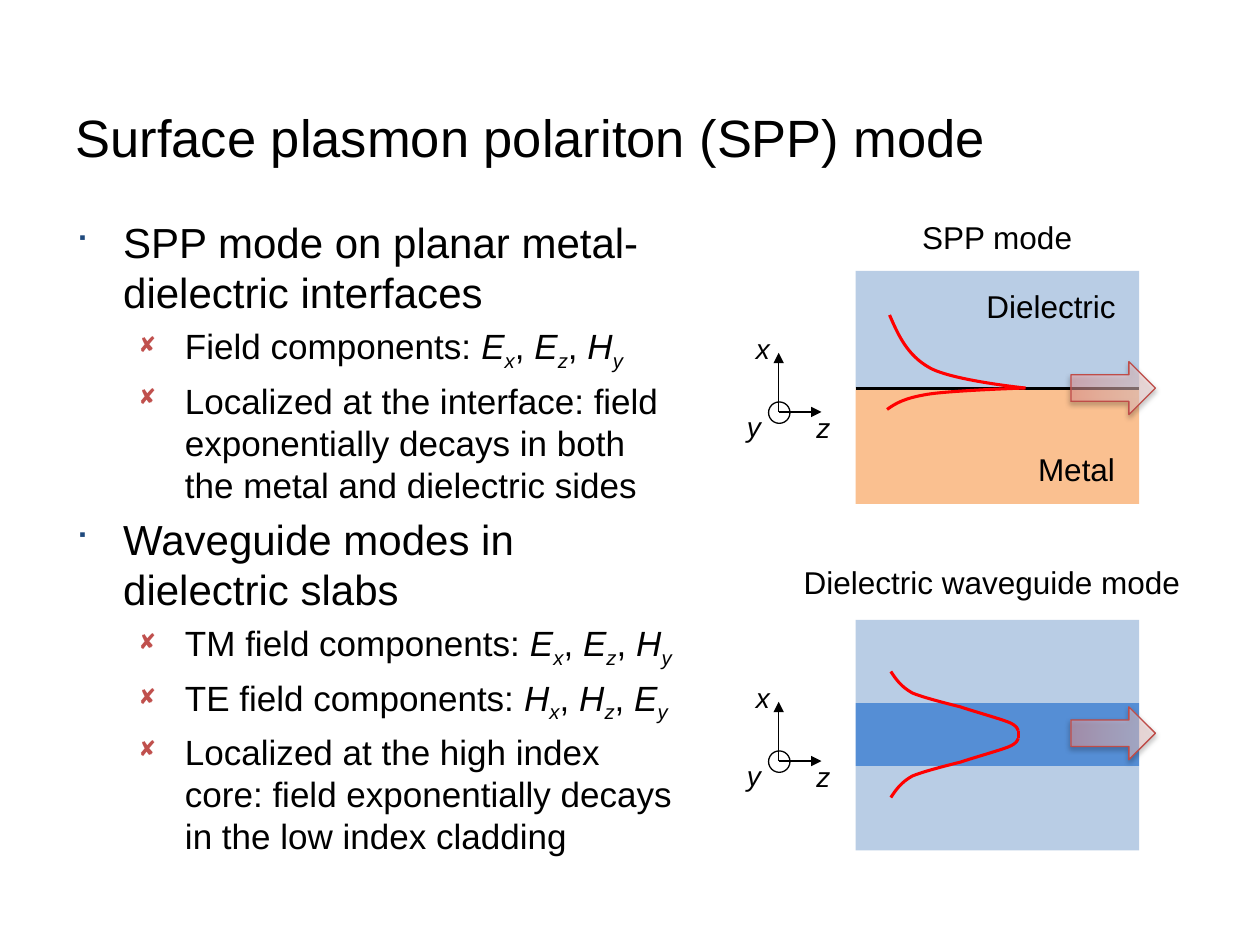
from dataclasses import dataclass

from lxml.etree import SubElement
from pptx import Presentation
from pptx.dml.color import RGBColor
from pptx.enum.shapes import MSO_CONNECTOR, MSO_SHAPE
from pptx.enum.text import MSO_ANCHOR, MSO_AUTO_SIZE, PP_ALIGN
from pptx.oxml import parse_xml
from pptx.oxml.ns import nsdecls, qn
from pptx.util import Inches, Pt


@dataclass(frozen=True)
class Theme:
    font: str = "Arial"
    bullet_font: str = "Wingdings"
    title: int = 30
    topic: int = 24
    detail: int = 20
    label: int = 18
    axis: int = 16
    black: str = "000000"
    topic_bullet: str = "1F497D"
    detail_bullet: str = "C0504D"
    dielectric: str = "B9CDE5"
    core: str = "558ED5"
    metal: str = "FAC090"
    field: str = "FF0000"
    arrow_line: str = "BF4C48"
    arrow_stops: tuple = ((0, "FFA6A5"), (35, "FFC0BF"), (100, "FFE7E7"))


THEME = Theme()
THIN, THICK = 0.75, 1.75
STACK_LEFT, STACK_WIDTH = 6.79, 2.25

# Level, text, field components (letter and subscript)
OUTLINE = [
    (0, "SPP mode on planar metal-dielectric interfaces", ""),
    (1, "Field components: ", "Ex Ez Hy"),
    (1, "Localized at the interface: field exponentially decays in both "
        "the metal and dielectric sides", ""),
    (0, "Waveguide modes in dielectric slabs", ""),
    (1, "TM field components: ", "Ex Ez Hy"),
    (1, "TE field components: ", "Hx Hz Ey"),
    (1, "Localized at the high index core: field exponentially decays "
        "in the low index cladding", ""),
]
# Per level: bullet, its colour, its size in %, text size, left margin, hanging indent
LEVELS = [
    ("■", THEME.topic_bullet, 75, THEME.topic, 0.38, 0.38),
    ("◻", THEME.detail_bullet, 80, THEME.detail, 0.87, 0.37),
]

# Bezier chains: a start point, then three points for each curve
DIELECTRIC_TAIL = [(7.06, 2.5), (7.13, 2.66), (7.2, 2.82), (7.38, 2.92),
                   (7.56, 3.02), (8.14, 3.08), (8.14, 3.08)]
METAL_TAIL = [(7.04, 3.25), (7.11, 3.2), (7.18, 3.16), (7.36, 3.13),
              (7.54, 3.1), (8.13, 3.08), (8.13, 3.08)]
GUIDED_HALF = [(7.07, 5.33), (7.11, 5.39), (7.15, 5.45), (7.24, 5.5),
               (7.33, 5.54), (7.62, 5.61), (7.62, 5.61),
               (7.74, 5.65), (7.92, 5.7), (8, 5.73),
               (8.08, 5.76), (8.08, 5.8), (8.08, 5.8)]
CORE_MIDDLE = 5.83


def rgb(color):
    return RGBColor.from_string(color)


def set_font(font, size, italic=None):
    font.name, font.size, font.italic = THEME.font, Pt(size), italic
    font.color.rgb = rgb(THEME.black)


def set_line(shape, color, width):
    shape.line.color.rgb = rgb(color)
    shape.line.width = Pt(width)


def add_title(slide, text):
    title = slide.shapes.title
    title.left, title.top = Inches(0.5), Inches(0.5)
    title.width, title.height = Inches(9), Inches(1.17)
    title.text_frame.text = text
    title.text_frame.vertical_anchor = MSO_ANCHOR.MIDDLE
    paragraph = title.text_frame.paragraphs[0]
    paragraph.alignment = PP_ALIGN.LEFT
    set_font(paragraph.font, THEME.title)


def add_bullet(paragraph, level):
    bullet, color, percent, _, margin, hanging = LEVELS[level]
    properties = paragraph._p.get_or_add_pPr()
    properties.set("marL", str(Inches(margin)))
    properties.set("indent", str(-Inches(hanging)))
    SubElement(SubElement(properties, qn("a:buClr")), qn("a:srgbClr"), val=color)
    SubElement(properties, qn("a:buSzPct"), val=str(percent * 1000))
    SubElement(properties, qn("a:buFont"), typeface=THEME.bullet_font, charset="2")
    SubElement(properties, qn("a:buChar"), char=bullet)


def add_field_components(paragraph, fields):
    for i, (letter, subscript) in enumerate(fields.split()):
        if i:
            paragraph.add_run().text = ", "
        for text, baseline in ((letter, 0), (subscript, -25000)):
            run = paragraph.add_run()
            run.text = text
            run.font.italic = True
            if baseline:
                run._r.get_or_add_rPr().set("baseline", str(baseline))


def add_outline(slide):
    frame = slide.shapes.add_textbox(
        Inches(0.5), Inches(1.67), Inches(5), Inches(5.17)).text_frame
    frame.word_wrap = True
    for i, (level, text, fields) in enumerate(OUTLINE):
        paragraph = frame.add_paragraph() if i else frame.paragraphs[0]
        size = LEVELS[level][3]
        paragraph.level = level
        add_bullet(paragraph, level)
        paragraph.add_run().text = text
        add_field_components(paragraph, fields)
        set_font(paragraph.font, size)
        if i:
            paragraph.space_before = Pt(0.2 * size)


def add_label(slide, text, left, top, width, height=0.4, size=THEME.label, italic=None):
    frame = slide.shapes.add_textbox(
        Inches(left), Inches(top), Inches(width), Inches(height)).text_frame
    frame.word_wrap = False
    frame.auto_size = MSO_AUTO_SIZE.SHAPE_TO_FIT_TEXT
    frame.text = text
    set_font(frame.paragraphs[0].font, size, italic)


def add_layer(slide, top, height, color):
    layer = slide.shapes.add_shape(
        MSO_SHAPE.RECTANGLE, Inches(STACK_LEFT), Inches(top),
        Inches(STACK_WIDTH), Inches(height))
    layer.shadow.inherit = False
    layer.fill.solid()
    layer.fill.fore_color.rgb = rgb(color)
    layer.line.fill.background()


def add_line(shapes, start, end, color=THEME.black, width=THIN, arrow=False):
    line = shapes.add_connector(
        MSO_CONNECTOR.STRAIGHT, *(Inches(value) for value in (*start, *end)))
    set_line(line, color, width)
    if arrow:
        SubElement(line.line._get_or_add_ln(), qn("a:tailEnd"), type="triangle")
    SubElement(line._element.spPr, qn("a:effectLst"))


def add_field_curve(shapes, chain):
    """Lay the chain as straight segments, then merge each three into one Bezier curve."""
    start, *points = [(Inches(x), Inches(y)) for x, y in chain]
    builder = shapes.build_freeform(*start)
    builder.add_line_segments(points, close=False)
    curve = builder.convert_to_shape()
    segments = list(curve._element.iter(qn("a:lnTo")))
    for i in range(0, len(segments), 3):
        bezier = parse_xml(f'<a:cubicBezTo {nsdecls("a")}/>')
        segments[i].addprevious(bezier)
        for segment in segments[i:i + 3]:
            bezier.append(segment[0])
            segment.getparent().remove(segment)
    curve.shadow.inherit = False
    curve.fill.background()
    set_line(curve, THEME.field, THICK)


def add_axes(slide, y):
    """Draw the x, y, z axes with their origin at height y."""
    x = 6.18
    add_line(slide.shapes, (x, y), (x, y - 0.47), arrow=True)
    add_line(slide.shapes, (x, y), (x + 0.34, y), arrow=True)
    out_of_plane = slide.shapes.add_shape(
        MSO_SHAPE.OVAL, Inches(x - 0.08), Inches(y - 0.08), Inches(0.17), Inches(0.17))
    out_of_plane.shadow.inherit = False
    out_of_plane.fill.background()
    set_line(out_of_plane, THEME.black, THIN)
    for name, dx, dy in (("x", -0.28, -0.69), ("y", -0.35, -0.07), ("z", 0.2, -0.06)):
        add_label(slide, name, x + dx, y + dy, 0.31, 0.37, THEME.axis, True)


def add_propagation_arrow(slide, top):
    arrow = slide.shapes.add_shape(
        MSO_SHAPE.RIGHT_ARROW, Inches(8.5), Inches(top), Inches(0.67), Inches(0.42))
    set_line(arrow, THEME.arrow_line, THIN)
    stops = "".join(
        f'<a:gs pos="{position * 1000}"><a:srgbClr val="{color}">'
        '<a:alpha val="50000"/></a:srgbClr></a:gs>'
        for position, color in THEME.arrow_stops)
    properties = arrow._element.spPr
    properties.find(qn("a:ln")).addprevious(parse_xml(
        f'<a:gradFill {nsdecls("a")}><a:gsLst>{stops}</a:gsLst><a:lin ang="0"/></a:gradFill>'))
    properties.append(parse_xml(
        f'<a:effectLst {nsdecls("a")}><a:outerShdw blurRad="{Pt(3.1)}" dist="{Pt(1.6)}" '
        f'dir="5400000" rotWithShape="0"><a:srgbClr val="{THEME.black}">'
        '<a:alpha val="38000"/></a:srgbClr></a:outerShdw></a:effectLst>'))


def add_waveguide_mode(slide):
    add_layer(slide, 4.92, 0.66, THEME.dielectric)
    add_layer(slide, 5.58, 0.5, THEME.core)
    add_layer(slide, 6.08, 0.67, THEME.dielectric)
    add_label(slide, "Dielectric waveguide mode", 6.28, 4.42, 3.22)
    add_axes(slide, 6.04)
    profile = slide.shapes.add_group_shape().shapes
    mirrored = [(x, 2 * CORE_MIDDLE - y) for x, y in GUIDED_HALF]
    add_field_curve(profile, GUIDED_HALF)
    add_field_curve(profile, mirrored)
    add_line(profile, GUIDED_HALF[-1], mirrored[-1], THEME.field, THICK)
    add_propagation_arrow(slide, 5.61)


def add_spp_mode(slide):
    interface = 3.08
    add_layer(slide, 2.15, 0.93, THEME.dielectric)
    add_layer(slide, interface, 0.92, THEME.metal)
    add_line(slide.shapes, (STACK_LEFT, interface),
             (STACK_LEFT + STACK_WIDTH, interface), width=THICK)
    add_field_curve(slide.shapes, DIELECTRIC_TAIL)
    add_field_curve(slide.shapes, METAL_TAIL)
    add_label(slide, "Metal", 8.14, 3.52, 0.82)
    add_label(slide, "Dielectric", 7.73, 2.23, 1.24)
    add_label(slide, "SPP mode", 7.22, 1.68, 1.4)
    add_axes(slide, 3.27)
    add_propagation_arrow(slide, 2.87)


def main():
    deck = Presentation()
    deck.slide_width, deck.slide_height = Inches(10), Inches(7.5)
    slide = deck.slides.add_slide(deck.slide_layouts[5])
    add_title(slide, "Surface plasmon polariton (SPP) mode")
    add_outline(slide)
    add_waveguide_mode(slide)
    add_spp_mode(slide)
    deck.save("out.pptx")


if __name__ == "__main__":
    main()
